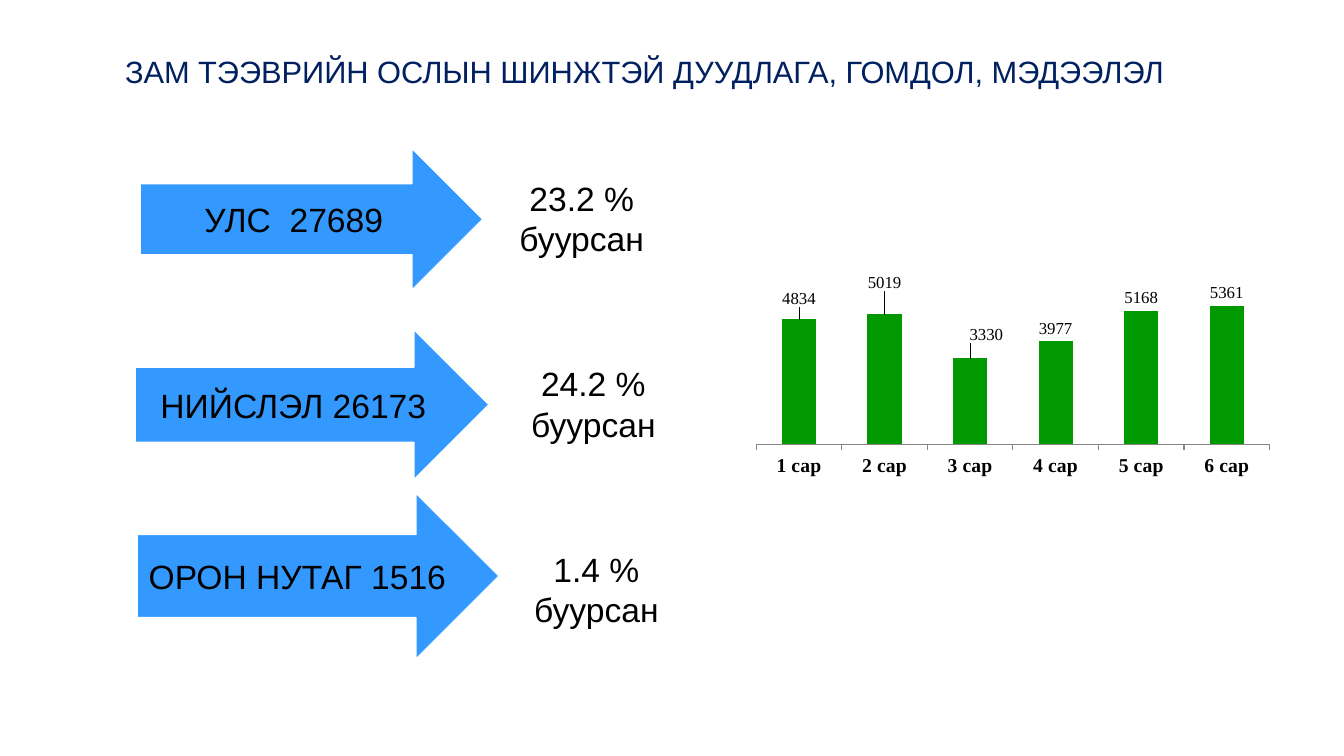
from lxml import etree
from pptx import Presentation
from pptx.chart.data import CategoryChartData
from pptx.dml.color import RGBColor
from pptx.enum import chart as charts, shapes, text
from pptx.oxml import ns
from pptx.util import Inches, Pt

COLORS = {"title": "002060", "arrow": "3399FF", "bar": "009900",
          "text": "000000", "edge": "FFFFFF", "axis": "868686"}
ROWS = [
    ("УЛС  27689", (1.39, 1.47, 3.4, 1.41), ["23.2 % буурсан"], (4.89, 1.72, 1.76, 0.89)),
    ("НИЙСЛЭЛ 26173", (1.34, 3.27, 3.51, 1.49), ["24.2 %", "буурсан"], (5.02, 3.54, 1.73, 0.93)),
    ("ОРОН НУТАГ 1516", (1.36, 4.89, 3.59, 1.65), ["1.4 %", "буурсан"], (5.05, 5.38, 1.73, 0.93)),
]
MONTHLY_CALLS = [4834, 5019, 3330, 3977, 5168, 5361]
LABEL_SHIFTS = {0: (0, -0.03), 1: (0, -0.07), 2: (0.03, -0.04)}


def color(name):
    """Return the named palette colour."""
    return RGBColor.from_string(COLORS[name])


def style_font(font, size, name, shade="text", bold=False):
    """Set size, typeface, colour and weight of a font."""
    font.size, font.name, font.bold = Pt(size), name, bold
    font.color.rgb = color(shade)


def add_title(page, wording, box):
    """Fill and place the title placeholder."""
    title = page.shapes.title
    title.left, title.top, title.width, title.height = map(Inches, box)
    title.text_frame.text = wording
    title.text_frame.vertical_anchor = text.MSO_ANCHOR.MIDDLE
    para = title.text_frame.paragraphs[0]
    para.alignment = text.PP_ALIGN.LEFT
    para.line_spacing = 0.9
    style_font(para.font, 22, "Arial", "title")


def add_panel(page, kind, lines, box):
    """Add a plain preset shape with centred lines of text."""
    panel = page.shapes.add_shape(kind, *map(Inches, box))
    panel.shadow.inherit = False
    panel.fill.background()
    panel.line.fill.background()
    frame = panel.text_frame
    frame.word_wrap = True
    frame.vertical_anchor = text.MSO_ANCHOR.MIDDLE
    frame.text = "\n".join(lines)
    for para in frame.paragraphs:
        para.alignment = text.PP_ALIGN.CENTER
        style_font(para.font, 24, "Arial")
    return panel


def add_row(page, total, arrow_box, change, change_box):
    """Add an arrow with a total and the change beside it."""
    arrow = add_panel(page, shapes.MSO_SHAPE.RIGHT_ARROW, [total], arrow_box)
    arrow.fill.solid()
    arrow.fill.fore_color.rgb = color("arrow")
    arrow.line.color.rgb = color("edge")
    arrow.line.width = Pt(1)
    add_panel(page, shapes.MSO_SHAPE.ROUNDED_RECTANGLE, change, change_box)


def manual_layout(**settings):
    """Build a chart layout element from its settings."""
    layout = etree.Element(ns.qn("c:layout"))
    manual = etree.SubElement(layout, ns.qn("c:manualLayout"))
    for tag, value in settings.items():
        etree.SubElement(manual, ns.qn(f"c:{tag}")).set("val", str(value))
    return layout


def place_plot(plot_area):
    """Fix the inner plot area within the chart."""
    for layout in plot_area.findall(ns.qn("c:layout")):
        plot_area.remove(layout)
    plot_area.insert(0, manual_layout(
        layoutTarget="inner", xMode="edge", yMode="edge", x=0.03, y=0.24, w=0.95, h=0.58))


def add_month_chart(page, box):
    """Add the column chart of monthly calls."""
    data = CategoryChartData()
    data.categories = [f"{month} сар" for month in range(1, len(MONTHLY_CALLS) + 1)]
    data.add_series("Series 1", MONTHLY_CALLS)
    chart = page.shapes.add_chart(
        charts.XL_CHART_TYPE.COLUMN_CLUSTERED, *map(Inches, box), data).chart
    chart.has_legend = chart.has_title = False
    style_font(chart.font, 10, "Times New Roman")

    months, values = chart.category_axis, chart.value_axis
    style_font(months.tick_labels.font, 14, "Times New Roman", bold=True)
    months.format.line.color.rgb = color("axis")
    months.major_tick_mark = charts.XL_TICK_MARK.OUTSIDE
    values.has_major_gridlines = values.visible = False
    values.minimum_scale, values.maximum_scale = 0, 6000

    plot = chart.plots[0]
    plot.gap_width, plot.vary_by_categories = 150, False
    series = plot.series[0]
    series.format.fill.solid()
    series.format.fill.fore_color.rgb = color("bar")
    labels = series.data_labels
    labels.show_value = True
    labels.position = charts.XL_LABEL_POSITION.OUTSIDE_END
    style_font(labels.font, 12, "Times New Roman")
    for index in LABEL_SHIFTS:
        label = series.points[index].data_label
        style_font(label.font, 12, "Times New Roman")
        label.position = charts.XL_LABEL_POSITION.OUTSIDE_END

    root = chart._chartSpace
    for label, (x, y) in zip(root.iter(ns.qn("c:dLbl")), LABEL_SHIFTS.values()):
        label[0].addnext(manual_layout(x=x, y=y))
    place_plot(next(root.iter(ns.qn("c:plotArea"))))


def main():
    """Build and save the deck."""
    deck = Presentation()
    deck.slide_width, deck.slide_height = Inches(13.33), Inches(7.5)
    page = deck.slides.add_slide(deck.slide_layouts[5])
    add_title(page, "ЗАМ ТЭЭВРИЙН ОСЛЫН ШИНЖТЭЙ ДУУДЛАГА, ГОМДОЛ, МЭДЭЭЛЭЛ",
              (1.14, 0.43, 10.86, 0.59))
    for row in ROWS:
        add_row(page, *row)
    add_month_chart(page, (7.34, 2.23, 5.36, 2.66))
    deck.save("out.pptx")


if __name__ == "__main__":
    main()
